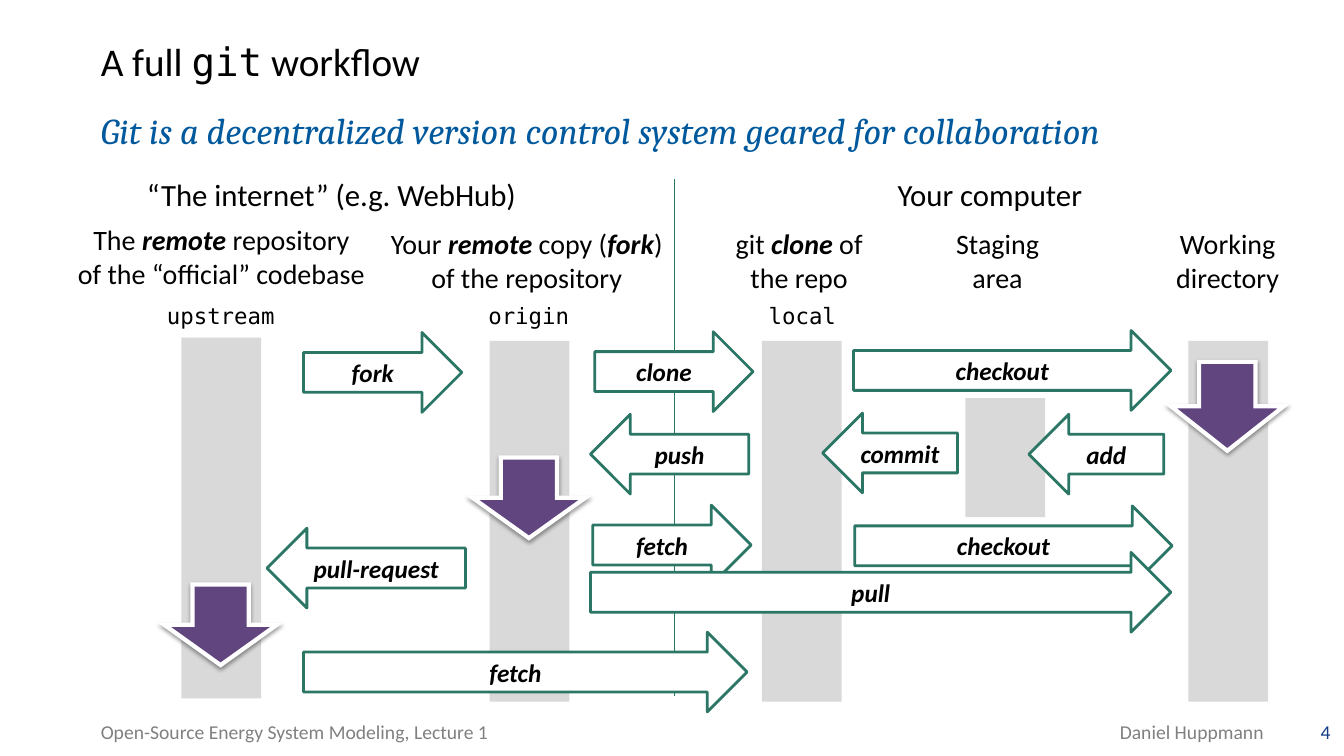
from dataclasses import dataclass

import pptx
import pptx.dml.color
import pptx.enum.shapes
import pptx.enum.text
import pptx.oxml
import pptx.oxml.ns
import pptx.util

RGBColor = pptx.dml.color.RGBColor
Cm = pptx.util.Cm
Pt = pptx.util.Pt
Shape = pptx.enum.shapes.MSO_SHAPE
Align = pptx.enum.text.PP_ALIGN
Anchor = pptx.enum.text.MSO_ANCHOR

BLACK = RGBColor(0x00, 0x00, 0x00)
WHITE = RGBColor(0xFF, 0xFF, 0xFF)
BAR_GREY = RGBColor(0xD9, 0xD9, 0xD9)
FOOTER_GREY = RGBColor(0x80, 0x80, 0x80)
SUBTITLE_BLUE = RGBColor(0x00, 0x59, 0x9D)
NUMBER_BLUE = RGBColor(0x14, 0x3C, 0x86)
ARROW_GREEN = RGBColor(0x2B, 0x76, 0x64)
DIVIDER_GREEN = RGBColor(0x28, 0x75, 0x63)
COMMIT_PURPLE = RGBColor(0x60, 0x45, 0x7F)

SANS = "Calibri"
SERIF = "Cambria"
MONO = "DejaVu Sans Mono"

ARROW_HEIGHT = 2.01
BAR_WIDTH = 2.01


@dataclass(frozen=True)
class Style:
    size: float
    color: RGBColor = BLACK
    name: str = SANS
    italic: bool = False
    bold: bool = False
    align: Align = Align.CENTER
    wrap: bool = True


@dataclass(frozen=True)
class Label:
    text: str
    left: float
    top: float
    width: float
    height: float
    style: Style


@dataclass(frozen=True)
class Bar:
    left: float
    top: float = 8.59
    height: float = 9.09


@dataclass(frozen=True)
class Command:
    text: str
    kind: Shape
    left: float
    top: float
    width: float


@dataclass(frozen=True)
class LocalWork:
    left: float
    top: float
    height: float = 2.03


TITLE = Style(28, align=Align.LEFT)
SUBTITLE = Style(26, SUBTITLE_BLUE, SERIF, italic=True, align=Align.LEFT)
FOOTER = Style(14, FOOTER_GREY, align=Align.LEFT)
AUTHOR = Style(14, FOOTER_GREY, align=Align.RIGHT)
NUMBER = Style(14, NUMBER_BLUE, align=Align.RIGHT)
PLACE = Style(22)
STAGE = Style(20)
ALIAS = Style(16, name=MONO, wrap=False)
COMMAND = Style(18, italic=True, bold=True)

BARS = [Bar(24.33, 10.03, 3), Bar(19.2), Bar(29.95), Bar(12.34), Bar(4.57, 8.51)]

LABELS = [
    Label("A full `git` workflow", 2.54, 0.94, 29.62, 1.37, TITLE),
    Label("Git is a decentralized version control system geared for collaboration",
          2.54, 2.72, 29.59, 1.19, SUBTITLE),
    Label("Daniel Huppmann", 20.65, 18.14, 11.2, 0.89, AUTHOR),
    Label("Open-Source Energy System Modeling, Lecture 1", 2.54, 18.14, 17.6, 0.89, FOOTER),
    Label("4", 32.18, 18.14, 1.35, 0.89, NUMBER),
    Label("“The internet” (e.g. WebHub)", 3.36, 4.42, 9.99, 0.99, PLACE),
    Label("Your computer", 21.95, 4.42, 5.99, 0.99, PLACE),
    Label("The *remote* repository\nof the “official” codebase", 1.68, 5.61, 7.8, 1.83, STAGE),
    Label("Your *remote *copy (*fork*)\nof the repository", 9.63, 5.72, 7.29, 1.78, STAGE),
    Label("git *clone* of\nthe repo", 18.16, 5.72, 3.96, 2.01, STAGE),
    Label("Staging\narea", 23.16, 5.72, 3.96, 2.01, STAGE),
    Label("Working\ndirectory", 28.96, 5.72, 3.96, 2.01, STAGE),
    Label("upstream", 3.94, 7.49, 3.25, 0.94, ALIAS),
    Label("origin", 12.04, 7.49, 2.57, 0.94, ALIAS),
    Label("local", 19.1, 7.49, 2.24, 0.94, ALIAS),
]

COMMANDS = [
    Command("add", Shape.LEFT_ARROW, 25.93, 10.44, 3.4),
    Command("push", Shape.LEFT_ARROW, 14.88, 10.44, 3.99),
    Command("pull-request", Shape.LEFT_ARROW, 6.73, 13.31, 5),
    Command("fork", Shape.RIGHT_ARROW, 7.65, 8.38, 3.99),
    Command("clone", Shape.RIGHT_ARROW, 14.99, 8.36, 3.99),
    Command("checkout", Shape.RIGHT_ARROW, 21.51, 8.33, 8),
    Command("commit", Shape.LEFT_ARROW, 20.73, 10.41, 3.4),
    Command("fetch", Shape.RIGHT_ARROW, 14.94, 12.73, 3.99),
    Command("checkout", Shape.RIGHT_ARROW, 21.54, 12.75, 8),
    Command("pull", Shape.RIGHT_ARROW, 14.88, 13.92, 14.63),
    Command("fetch", Shape.RIGHT_ARROW, 7.65, 15.93, 11.18),
]

LOCAL_WORK = [LocalWork(29.51, 9.12, 2.24), LocalWork(11.91, 11.53), LocalWork(4.14, 14.73)]

SHADOW = (
    f'<a:outerShdw {pptx.oxml.ns.nsdecls("a")} blurRad="39370" dist="20320" dir="5400000" '
    'rotWithShape="0"><a:srgbClr val="000000"><a:alpha val="38000"/></a:srgbClr></a:outerShdw>'
)
MITER = f'<a:miter {pptx.oxml.ns.nsdecls("a")} lim="800000"/>'


def set_values(target: object, values: dict) -> None:
    for name, value in values.items():
        setattr(target, name, value)


def write(frame: pptx.text.text.TextFrame, text: str, style: Style) -> None:
    frame.word_wrap = style.wrap
    para = frame.paragraphs[0]
    para.alignment = style.align
    for row, line in enumerate(text.split("\n")):
        if row:
            para.add_line_break()
        mark = "`" if "`" in line else "*"
        for index, piece in enumerate(line.split(mark)):
            if not piece:
                continue
            marked = index % 2 == 1
            strong = marked and mark == "*"
            span = para.add_run()
            span.text = piece
            set_values(span.font, {
                "size": Pt(style.size),
                "name": MONO if marked and mark == "`" else style.name,
                "bold": style.bold or strong,
                "italic": style.italic or strong,
            })
            span.font.color.rgb = style.color


def draw_shape(page: pptx.slide.Slide, kind: Shape, left: float, top: float, width: float,
               height: float, fill: RGBColor) -> pptx.shapes.autoshape.Shape:
    shape = page.shapes.add_shape(kind, Cm(left), Cm(top), Cm(width), Cm(height))
    shape.shadow.inherit = False
    shape.fill.solid()
    shape.fill.fore_color.rgb = fill
    shape.line.fill.background()
    return shape


def draw_outline(line: pptx.dml.line.LineFormat, color: RGBColor, width: float) -> None:
    line.color.rgb = color
    line.width = Pt(width)


def draw_label(page: pptx.slide.Slide, label: Label) -> None:
    box = page.shapes.add_textbox(Cm(label.left), Cm(label.top), Cm(label.width), Cm(label.height))
    if label.style.wrap:
        set_values(box.text_frame, {
            f"margin_{side}": 0 for side in ("left", "top", "right", "bottom")
        })
    write(box.text_frame, label.text, label.style)


def draw_divider(page: pptx.slide.Slide) -> None:
    divider = page.shapes.add_connector(
        pptx.enum.shapes.MSO_CONNECTOR.STRAIGHT, Cm(16.99), Cm(4.52), Cm(16.99), Cm(17.53))
    draw_outline(divider.line, DIVIDER_GREEN, 0.75)
    divider._element.spPr.append(pptx.oxml.parse_xml(f'<a:effectLst {pptx.oxml.ns.nsdecls("a")}/>'))


def draw_command(page: pptx.slide.Slide, command: Command) -> None:
    arrow = draw_shape(page, command.kind, command.left, command.top, command.width,
                       ARROW_HEIGHT, WHITE)
    draw_outline(arrow.line, ARROW_GREEN, 2)
    arrow.text_frame.vertical_anchor = Anchor.MIDDLE
    write(arrow.text_frame, command.text, COMMAND)


def draw_local_work(page: pptx.slide.Slide, work: LocalWork) -> None:
    arrow = draw_shape(page, Shape.DOWN_ARROW, work.left, work.top, 2.84, work.height,
                       COMMIT_PURPLE)
    draw_outline(arrow.line, WHITE, 3)
    properties = arrow._element.spPr
    properties.find(pptx.oxml.ns.qn("a:ln")).append(pptx.oxml.parse_xml(MITER))
    properties.find(pptx.oxml.ns.qn("a:effectLst")).append(pptx.oxml.parse_xml(SHADOW))


def main() -> None:
    deck = pptx.Presentation()
    set_values(deck, {"slide_width": Cm(33.87), "slide_height": Cm(19.05)})
    page = deck.slides.add_slide(deck.slide_layouts[6])
    for bar in BARS:
        draw_shape(page, Shape.RECTANGLE, bar.left, bar.top, BAR_WIDTH, bar.height, BAR_GREY)
    for label in LABELS:
        draw_label(page, label)
    draw_divider(page)
    for command in COMMANDS:
        draw_command(page, command)
    for work in LOCAL_WORK:
        draw_local_work(page, work)
    deck.save("out.pptx")


if __name__ == "__main__":
    main()
